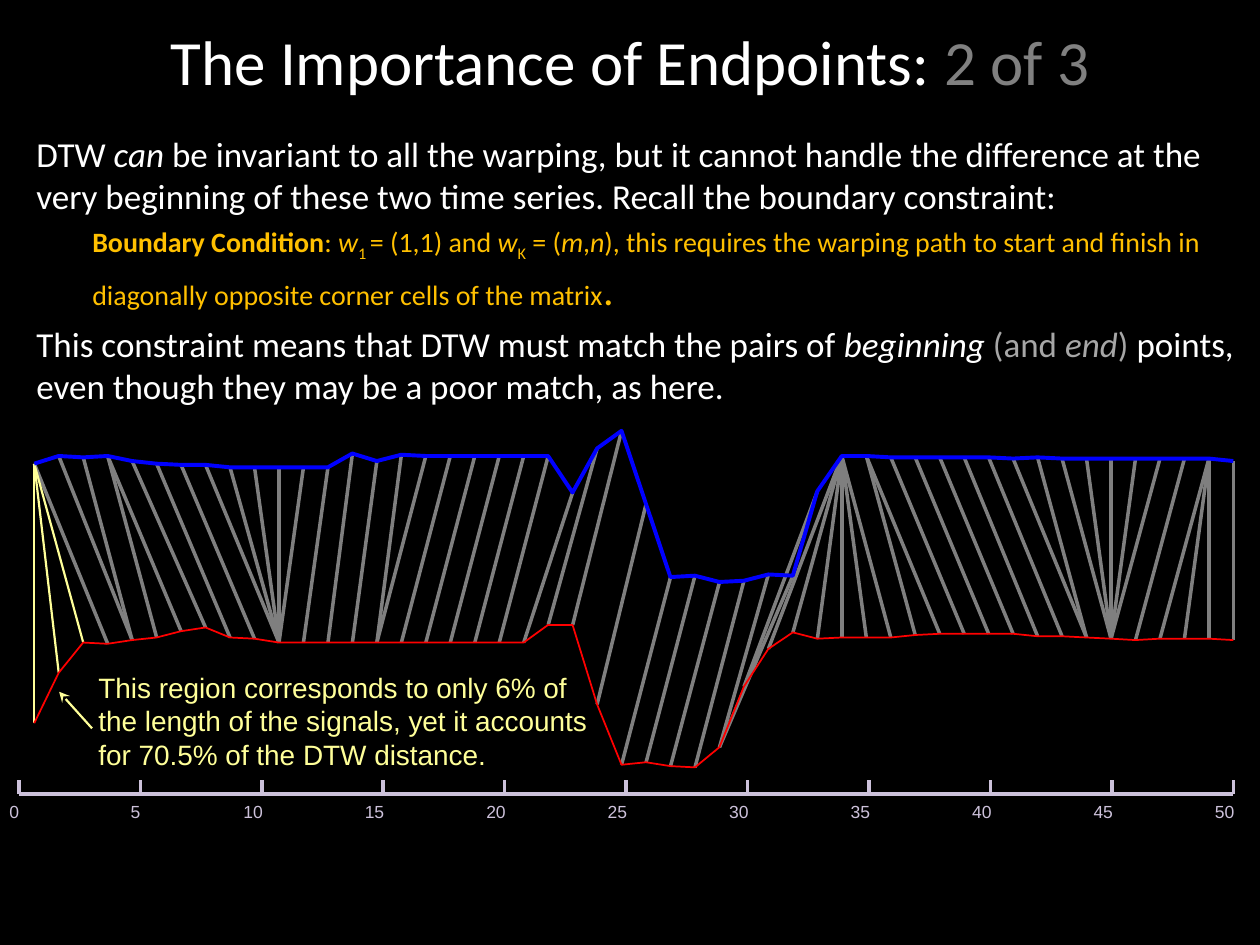
from dataclasses import dataclass
from itertools import accumulate

from lxml.etree import SubElement
from pptx import Presentation
from pptx.dml.color import RGBColor
from pptx.enum.shapes import MSO_CONNECTOR
from pptx.enum.text import MSO_ANCHOR, MSO_AUTO_SIZE, PP_ALIGN
from pptx.oxml.ns import qn
from pptx.util import Pt


@dataclass(frozen=True)
class Theme:
    black: str = "000000"
    white: str = "FFFFFF"
    gray: str = "808080"
    light_gray: str = "A6A6A6"
    match: str = "7F7F7F"
    axis: str = "CCC1DA"
    gold: str = "FFC000"
    yellow: str = "FFFF99"
    red: str = "FF0000"
    blue: str = "0000FF"
    heading_font: str = "Calibri"
    chart_font: str = "Arial"
    title: int = 36
    body: int = 20
    condition: int = 16
    full_stop: int = 24
    note: int = 16
    tick: int = 10


T = Theme()

# Series heights on the slide, in points, one value per time step
LOWER = [413.3, 384.5, 367.2, 367.9, 365.8, 364.3, 360.7, 358.6, 364.3, 365,
         *[367.2] * 11, 357.1, 357.1, 402.5, 437, 435.6, 437.8, 438.5, 427,
         392.4, 370.8, 361.4, 365, *[364.3] * 3, 362.9, *[362.2] * 4,
         363.6, 363.6, 364.3, 365, 365.8, *[365] * 3, 365.8]
UPPER = [265, 260.6, 261.4, 260.6, 263.5, 265, 265.7, 265.7, *[267.1] * 5,
         259.2, 263.5, 259.9, *[260.6] * 6, 281.5, 256.3, 246.2, 288, 329.8,
         329, 332.6, 331.9, 328.3, 329, 280.8, 260.6, 260.6, *[261.4] * 5,
         262.1, 261.4, *[262.1] * 7, 263.5]

# Warping path: step the lower series, the upper series, or both
STEPS = {"L": (1, 0), "U": (0, 1), "B": (1, 1)}
PATH = ("LLLBUBLBBBBUUUUBBBBU" + "B" * 14 + "UBBLLLLLBL" + "B" * 6
        + "UBUUUUBBLLB")
POOR_MATCHES = 3

SERIES_LEFT, SERIES_RIGHT = 19.6, 704.8
AXIS_LEFT, AXIS_RIGHT, AXIS_Y = 10.8, 704.8, 453.6


def series_x(i):
    return SERIES_LEFT + i * (SERIES_RIGHT - SERIES_LEFT) / (len(LOWER) - 1)


def add_run(p, text, size, color, font, bold=False, italic=False, sub=False):
    r = p.add_run()
    r.text = text
    r.font.size, r.font.name = Pt(size), font
    r.font.color.rgb = RGBColor.from_string(color)
    r.font.bold, r.font.italic = bold, italic
    if sub:
        r._r.get_or_add_rPr().set("baseline", "-25000")


def add_text_box(s, left, top, width, height, inset=True):
    tf = s.shapes.add_textbox(Pt(left), Pt(top), Pt(width), Pt(height)).text_frame
    tf.word_wrap = True
    if not inset:
        tf.margin_left = tf.margin_right = tf.margin_top = tf.margin_bottom = 0
        tf.auto_size = MSO_AUTO_SIZE.SHAPE_TO_FIT_TEXT
    return tf


def add_line(s, start, end, color, width=0, arrow=False):
    sp = s.shapes.add_connector(MSO_CONNECTOR.STRAIGHT,
                                *[Pt(v) for v in (*start, *end)])
    sp.line.color.rgb = RGBColor.from_string(color)
    sp.line.width = Pt(width)
    if arrow:
        SubElement(sp.line._get_or_add_ln(), qn("a:headEnd"), type="stealth")
    SubElement(sp._element.spPr, qn("a:effectLst"))


def add_series(s, heights, color, width):
    points = [(Pt(series_x(i)), Pt(y)) for i, y in enumerate(heights)]
    builder = s.shapes.build_freeform(*points[0])
    builder.add_line_segments(points[1:], close=False)
    sp = builder.convert_to_shape()
    sp.shadow.inherit = False
    sp.fill.background()
    sp.line.color.rgb = RGBColor.from_string(color)
    sp.line.width = Pt(width)


def add_title(s):
    sp = s.shapes.title
    sp.left, sp.top, sp.width, sp.height = Pt(12), Pt(0), Pt(696), Pt(69)
    tf = sp.text_frame
    tf.vertical_anchor = MSO_ANCHOR.MIDDLE
    p = tf.paragraphs[0]
    p.alignment = PP_ALIGN.CENTER
    add_run(p, "The Importance of Endpoints: ", T.title, T.white, T.heading_font)
    add_run(p, "2 of 3", T.title, T.gray, T.heading_font)


def add_body(s):
    italic, sub = {"italic": True}, {"sub": True}
    muted = {"color": T.light_gray}
    paragraphs = [
        (T.body, T.white, 0, [
            ("DTW ", {}), ("can", italic),
            (" be invariant to all the warping, but it cannot handle the "
             "difference at the very beginning of these two time series. "
             "Recall the boundary constraint:", {})]),
        (T.condition, T.gold, 32, [
            ("Boundary Condition", {"bold": True}), (": ", {}),
            ("w", italic), ("1 ", sub), ("= (1,1) and ", {}),
            ("w", italic), ("K", sub), (" = (", {}),
            ("m", italic), (",", {}), ("n", italic),
            ("), this requires the warping path to start and finish in "
             "diagonally opposite corner cells of the matrix", {}),
            (".", {"size": T.full_stop})]),
        (T.body, T.white, 0, [
            ("This constraint means that DTW must match the pairs of ", {}),
            ("beginning ", italic), ("(and ", muted),
            ("end", {**muted, **italic}), (") ", muted),
            ("points, even though they may be a poor match, as here.", {})]),
    ]
    tf = add_text_box(s, 13.7, 72, 706.3, 165.6)
    for i, (size, color, indent, runs) in enumerate(paragraphs):
        p = tf.add_paragraph() if i else tf.paragraphs[0]
        p.space_before = Pt(5 if i else 0)
        p._p.get_or_add_pPr().set("marL", str(Pt(indent)))
        for text, style in runs:
            add_run(p, text, **{"size": size, "color": color,
                                "font": T.heading_font, **style})


def add_axis(s):
    gap = (AXIS_RIGHT - AXIS_LEFT) / 10
    for i in range(11):
        x, label = AXIS_LEFT + i * gap, str(5 * i)
        add_line(s, (x, AXIS_Y), (x, AXIS_Y - 8), T.axis)
        width = 10 * len(label)
        tf = add_text_box(s, x - width / 2 - 0.5, 458, width, 21.6, inset=False)
        tf.word_wrap = False
        add_run(tf.paragraphs[0], label, T.tick, T.axis, T.chart_font)
    add_line(s, (AXIS_LEFT, AXIS_Y), (AXIS_RIGHT, AXIS_Y), T.axis)


def add_matches(s):
    pairs = list(accumulate((STEPS[c] for c in PATH), initial=(0, 0),
                            func=lambda a, b: (a[0] + b[0], a[1] + b[1])))
    for k, (low, up) in reversed(list(enumerate(pairs))):
        color, width = (T.yellow, 1.25) if k < POOR_MATCHES else (T.match, 0)
        add_line(s, (series_x(low), LOWER[low]), (series_x(up), UPPER[up]),
                 color, width)


def add_note(s):
    tf = add_text_box(s, 56.2, 383, 285.8, 58.3, inset=False)
    add_run(tf.paragraphs[0],
            "This region corresponds to only 6% of the length of the signals, "
            "yet it accounts for 70.5% of the DTW distance.",
            T.note, T.yellow, T.chart_font)
    add_line(s, (33.8, 395.3), (52.6, 416.2), T.yellow, 1.25, arrow=True)


def main():
    prs = Presentation()
    prs.slide_width, prs.slide_height = Pt(720), Pt(540)
    s = prs.slides.add_slide(prs.slide_layouts[5])
    s.background.fill.solid()
    s.background.fill.fore_color.rgb = RGBColor.from_string(T.black)

    # Heading and explanation
    add_title(s)
    add_body(s)

    # Time axis, warping matches and the two series
    add_axis(s)
    add_matches(s)
    add_series(s, LOWER, T.red, 1)
    add_series(s, UPPER, T.blue, 2.25)

    # Note on the poorly matched start
    add_note(s)
    prs.save("out.pptx")


if __name__ == "__main__":
    main()
